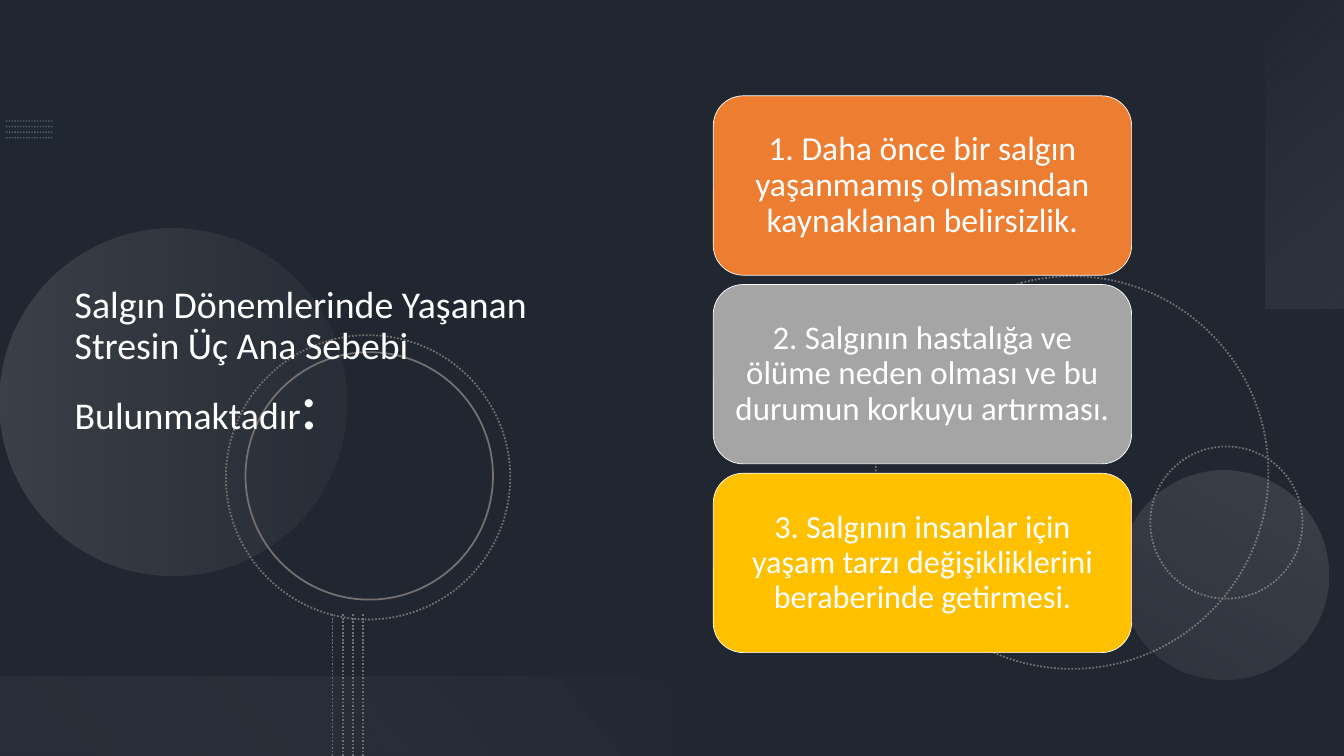
from lxml.etree import SubElement
from pptx import Presentation
from pptx.dml.color import RGBColor
from pptx.enum.dml import MSO_LINE
from pptx.enum.shapes import MSO_CONNECTOR, MSO_SHAPE
from pptx.enum.text import MSO_ANCHOR, MSO_AUTO_SIZE, PP_ALIGN
from pptx.oxml import parse_xml
from pptx.oxml.ns import nsdecls, qn
from pptx.util import Cm, Pt


def color(code):
    return RGBColor.from_string(code)


def fade(part, share):
    for tone in part.iter(qn("a:srgbClr")):
        SubElement(tone, qn("a:alpha")).set("val", str(share * 1000))


class Board:
    font = "Calibri"
    white = "FFFFFF"
    gray = "767171"

    def __init__(self, slide):
        self.slide = slide
        self.shapes = slide.shapes

    def shape(self, kind, box, turn=0):
        shape = self.shapes.add_shape(kind, *[Cm(n) for n in box])
        shape.shadow.inherit = False
        shape.rotation = turn
        shape.fill.background()
        shape.line.fill.background()
        return shape

    def paint(self, shape, code):
        shape.fill.solid()
        shape.fill.fore_color.rgb = color(code)

    def stroke(self, line, code, width, dots=True):
        line.color.rgb = color(code)
        line.width = Pt(width)
        if dots:
            line.dash_style = MSO_LINE.ROUND_DOT

    def veil(self, box, code, share):
        shape = self.shape(MSO_SHAPE.RECTANGLE, box)
        self.paint(shape, code)
        fade(shape.element.spPr, share)

    def ring(self, left, top, size, turn, dots=True):
        shape = self.shape(MSO_SHAPE.OVAL, (left, top, size, size), turn)
        self.stroke(shape.line, self.gray, 2.5, dots)

    def blend(self, kind, box, turn, angle, stops):
        shape = self.shape(kind, box, turn)
        marks = "".join(
            f'<a:gs pos="{spot * 1000}"><a:srgbClr val="{code}">'
            f'<a:alpha val="{share * 1000}"/></a:srgbClr></a:gs>'
            for spot, code, share in stops
        )
        props = shape.element.spPr
        old = props.find(qn("a:noFill"))
        props.replace(old, parse_xml(
            f'<a:gradFill {nsdecls("a")} rotWithShape="1"><a:gsLst>{marks}</a:gsLst>'
            f'<a:lin ang="{angle * 60000}" scaled="0"/></a:gradFill>'
        ))

    def rule(self, ends, code, width, share=100):
        rule = self.shapes.add_connector(MSO_CONNECTOR.STRAIGHT, *[Cm(n) for n in ends])
        self.stroke(rule.line, code, width)
        props = rule.element.spPr
        if share < 100:
            fade(props, share)
        SubElement(props, qn("a:effectLst"))

    def style(self, para, size, align):
        para.alignment = align
        para.line_spacing = 0.9
        for run in para.runs:
            run.font.name = self.font
            run.font.size = Pt(size)
            run.font.color.rgb = color(self.white)

    def title(self, box, text, mark):
        title = self.shapes.title
        title.left, title.top, title.width, title.height = [Cm(n) for n in box]
        self.shapes.element.append(title.element)
        frame = title.text_frame
        frame.text = text
        frame.word_wrap = True
        frame.auto_size = MSO_AUTO_SIZE.NONE
        frame.vertical_anchor = MSO_ANCHOR.MIDDLE
        last = frame.paragraphs[-1].add_run()
        last.text = mark
        for para in frame.paragraphs:
            self.style(para, 54, PP_ALIGN.LEFT)
            para.space_after = Pt(6)
        last.font.size = Pt(96)

    def card(self, box, text, code, size):
        card = self.shape(MSO_SHAPE.ROUNDED_RECTANGLE, box)
        self.paint(card, code)
        self.stroke(card.line, self.white, 1, dots=False)
        frame = card.text_frame
        frame.text = text
        frame.word_wrap = True
        frame.vertical_anchor = MSO_ANCHOR.MIDDLE
        frame.margin_left = frame.margin_right = Cm(0.5)
        self.style(frame.paragraphs[0], size, PP_ALIGN.CENTER)


def main():
    deck = Presentation()
    wide, high = 67.72, 38.1
    deck.slide_width, deck.slide_height = Cm(wide), Cm(high)
    slide = deck.slides.add_slide(deck.slide_layouts[5])
    slide.background.fill.solid()
    slide.background.fill.fore_color.rgb = color("44546A")
    board = Board(slide)

    board.veil((0, 0, wide, high), "000000", 53)
    for row in range(4):
        y = 6.1 + 0.28 * row
        board.rule((0.3, y, 2.69, y), "8497B0", 2, 50)

    board.ring(44.12, 13.92, 19.79, 75)
    board.ring(57.96, 22.5, 7.67, 270)
    board.blend(MSO_SHAPE.OVAL, (0, 11.53, 17.48, 17.48), 270, 90,
                [(0, "AFABAB", 20), (100, "767171", 10)])
    board.blend(MSO_SHAPE.OVAL, (56.39, 23.72, 10.54, 10.54), 210, 90,
                [(0, "AFABAB", 10), (100, "AFABAB", 20)])
    board.ring(11.38, 16.89, 14.33, 75)
    board.ring(12.37, 17.75, 12.47, 75, dots=False)
    board.blend(MSO_SHAPE.RECTANGLE, (57.99, 5.79, 15.54, 3.96), 270, 140,
                [(0, "F5F5F5", 0), (100, "AFABAB", 10)])
    board.blend(MSO_SHAPE.RECTANGLE, (0, 34.11, 33.86, 3.96), 180, 140,
                [(10, "767171", 10), (100, "F1F0F0", 0)])
    for col in range(4):
        x = 16.76 + 0.51 * col
        board.rule((x, 30.96, x, high), board.gray, 2.5)

    board.title((3.51, 2.74, 23.32, 31.32),
                "Salgın Dönemlerinde Yaşanan Stresin Üç Ana Sebebi\nBulunmaktadır", ":")
    cards = [
        ("1. Daha önce bir salgın yaşanmamış olmasından kaynaklanan belirsizlik.", "ED7D31", 48),
        ("2. Salgının hastalığa ve ölüme neden olması ve bu durumun korkuyu artırması.", "A5A5A5", 47),
        ("3. Salgının insanlar için yaşam tarzı değişikliklerini beraberinde getirmesi.", "FFC000", 46),
    ]
    for row, (text, code, size) in enumerate(cards):
        board.card((35.94, 4.83 + 9.51 * row, 21.08, 9.04), text, code, size)

    deck.save("out.pptx")


if __name__ == "__main__":
    main()
